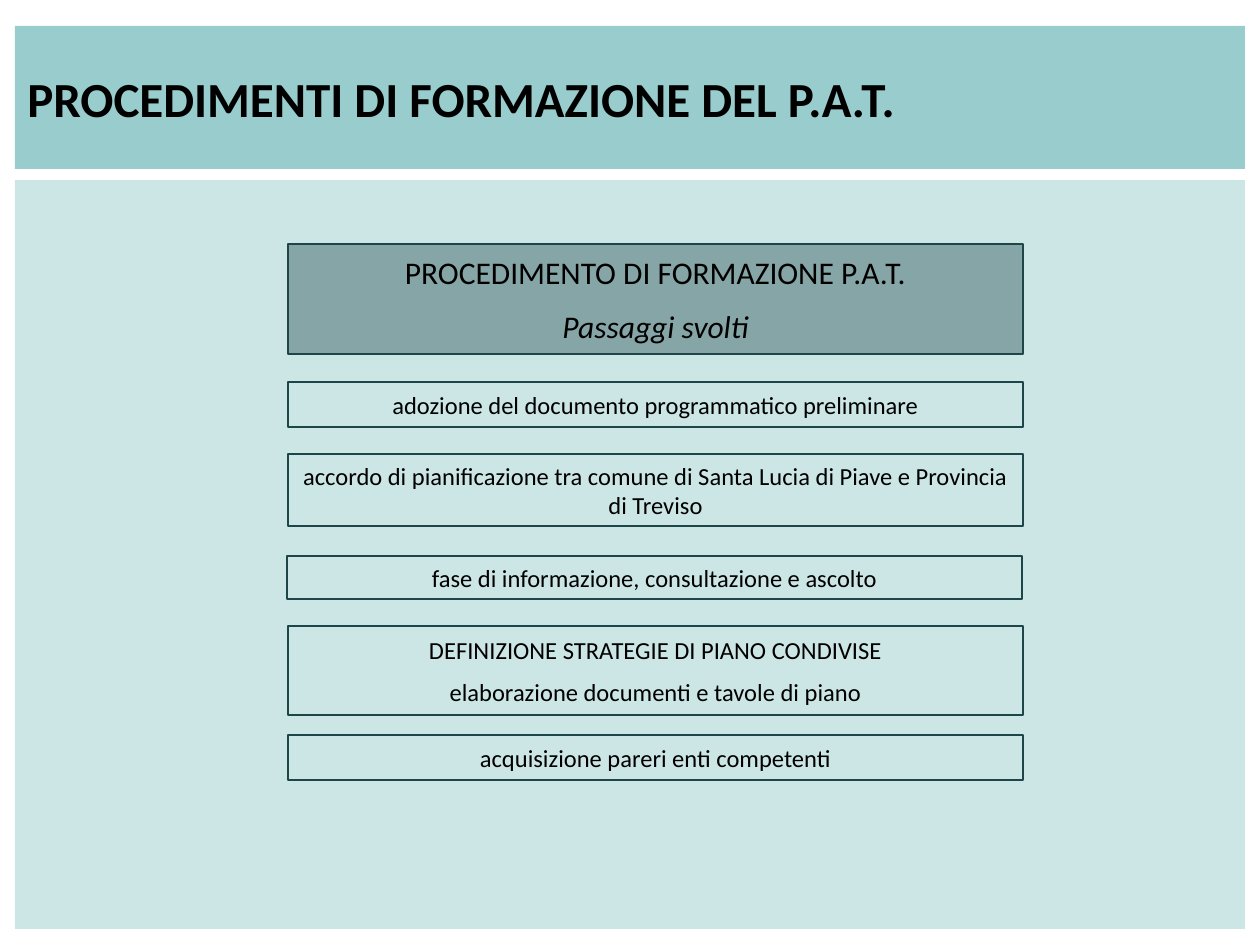
from dataclasses import dataclass

from lxml import etree
from pptx import Presentation
from pptx.dml.color import RGBColor
from pptx.enum.shapes import MSO_SHAPE as Shape
from pptx.enum.text import MSO_ANCHOR as Anchor, PP_ALIGN as Align
from pptx.oxml.ns import qn
from pptx.util import Emu, Pt

PX_PER_INCH = 126


@dataclass(frozen=True)
class Theme:
    font: str = "Calibri"
    teal: str = "008080"
    dark: str = "1E4548"
    text: str = "000000"
    title_size: int = 28
    heading_size: int = 18
    step_size: int = 14
    border: float = 1.5


THEME = Theme()
BAND_LEFT, BAND_WIDTH = 15, 1230
STEP_LEFT, STEP_WIDTH = 288, 735

# Left, top, height and lines of each step
STEPS = [
    (STEP_LEFT, 382, 45, ["adozione del documento programmatico preliminare"]),
    (STEP_LEFT, 454, 72, ["accordo di pianificazione tra comune di Santa Lucia "
                          "di Piave e Provincia di Treviso"]),
    (STEP_LEFT - 1, 556, 43, ["fase di informazione, consultazione e ascolto"]),
    (STEP_LEFT, 626, 89, ["DEFINIZIONE STRATEGIE DI PIANO CONDIVISE",
                          "elaborazione documenti e tavole di piano"]),
    (STEP_LEFT, 735, 45, ["acquisizione pareri enti competenti"]),
]


def px(length):
    return Emu(round(length * 914400 / PX_PER_INCH))


def add_rectangle(slide, left, top, width, height, fill=None, opacity=100, line=None):
    shape = slide.shapes.add_shape(
        Shape.RECTANGLE, px(left), px(top), px(width), px(height))
    shape.shadow.inherit = False
    if fill:
        shape.fill.solid()
        shape.fill.fore_color.rgb = RGBColor.from_string(fill)
        color = shape.fill._xPr.find(qn("a:solidFill"))[0]
        etree.SubElement(color, qn("a:alpha"), val=str(opacity * 1000))
    else:
        shape.fill.background()
    if line:
        shape.line.color.rgb = RGBColor.from_string(line)
        shape.line.width = Pt(THEME.border)
    else:
        shape.line.fill.background()
    return shape


def write_lines(shape, lines, size, align=Align.CENTER, wrap=True, bold=False):
    frame = shape.text_frame
    frame.text = "\n".join(lines)
    frame.word_wrap = wrap
    frame.vertical_anchor = Anchor.MIDDLE
    for index, paragraph in enumerate(frame.paragraphs):
        paragraph.alignment = align
        if index:
            paragraph.space_before = Pt(size / 2)
        for run in paragraph.runs:
            run.font.name = THEME.font
            run.font.size = Pt(size)
            run.font.bold = bold
            run.font.color.rgb = RGBColor.from_string(THEME.text)


def add_box(slide, left, top, height, lines, size, **fill):
    box = add_rectangle(slide, left, top, STEP_WIDTH, height, line=THEME.dark, **fill)
    write_lines(box, lines, size)
    return box


def main():
    presentation = Presentation()
    presentation.slide_width, presentation.slide_height = px(1260), px(945)
    slide = presentation.slides.add_slide(presentation.slide_layouts[6])

    # Title band and body panel
    title = add_rectangle(slide, BAND_LEFT, 26, BAND_WIDTH, 143, THEME.teal, 40)
    write_lines(title, ["PROCEDIMENTI DI FORMAZIONE DEL P.A.T."],
                THEME.title_size, Align.LEFT, wrap=False, bold=True)
    add_rectangle(slide, BAND_LEFT, 180, BAND_WIDTH, 749, THEME.teal, 20)

    # Heading of the procedure
    heading = add_box(slide, STEP_LEFT, 244, 110,
                      ["PROCEDIMENTO DI FORMAZIONE P.A.T.", "Passaggi svolti"],
                      THEME.heading_size, fill=THEME.dark, opacity=40)
    heading.text_frame.paragraphs[1].runs[0].font.italic = True

    # Completed steps
    for left, top, height, lines in STEPS:
        add_box(slide, left, top, height, lines, THEME.step_size)

    presentation.save("out.pptx")


if __name__ == "__main__":
    main()
